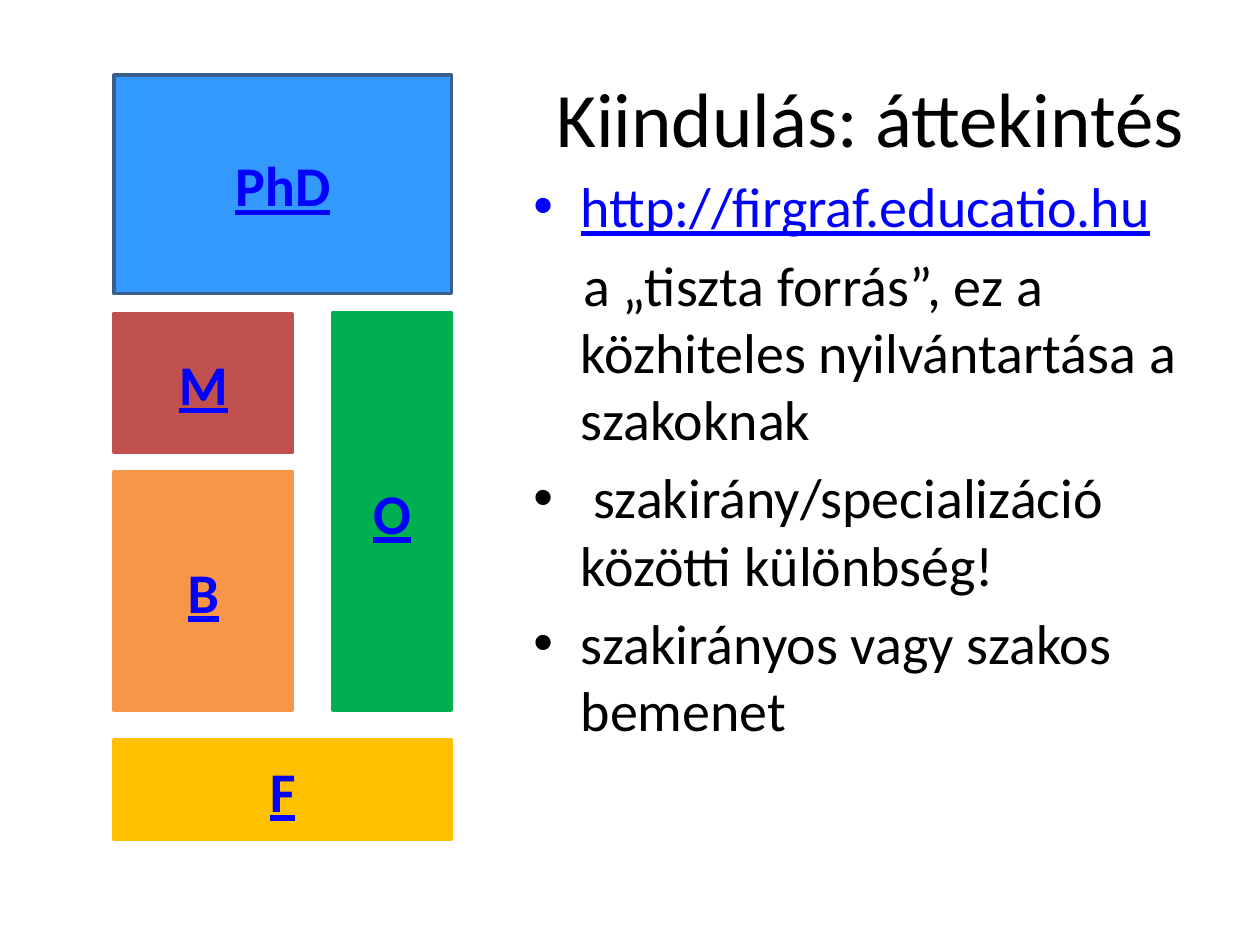
from dataclasses import dataclass

from lxml.etree import SubElement
from pptx import Presentation
from pptx.dml.color import RGBColor
from pptx.enum.shapes import MSO_SHAPE
from pptx.enum.text import MSO_ANCHOR, MSO_AUTO_SIZE, PP_ALIGN
from pptx.oxml.ns import qn
from pptx.util import Pt


@dataclass(frozen=True)
class Theme:
    """Colours, font and type sizes of the slide."""

    font: str = "Calibri"
    title_size: int = 44
    body_size: int = 32
    ink: str = "000000"
    link: str = "0000FF"
    doctoral: str = "3399FF"
    doctoral_edge: str = "3A5F8C"
    master: str = "C0504D"
    bachelor: str = "F79646"
    undivided: str = "00B050"
    vocational: str = "FFC000"


class SlideBuilder:
    """Adds styled elements to the current slide."""

    def __init__(self, slide, theme):
        self.slide = slide
        self.theme = theme

    def place(self, element, left, top, width, height):
        element.left, element.top = Pt(left), Pt(top)
        element.width, element.height = Pt(width), Pt(height)

    def run(self, paragraph, text, size, color, linked=False, bold=False):
        run = paragraph.add_run()
        run.text = text
        run.font.name = self.theme.font
        run.font.size = Pt(size)
        run.font.bold = bold
        run.font.underline = linked
        run.font.color.rgb = RGBColor.from_string(color)

    def title(self, text, *box):
        heading = self.slide.shapes.title
        self.place(heading, *box)
        frame = heading.text_frame
        frame.auto_size = MSO_AUTO_SIZE.NONE
        frame.vertical_anchor = MSO_ANCHOR.MIDDLE
        frame.paragraphs[0].alignment = PP_ALIGN.RIGHT
        self.run(frame.paragraphs[0], text, self.theme.title_size, self.theme.ink)

    def points(self, items, *box):
        body = self.slide.placeholders[1]
        self.place(body, *box)
        frame = body.text_frame
        frame.auto_size = MSO_AUTO_SIZE.NONE
        for index, (text, bulleted, linked) in enumerate(items):
            paragraph = frame.add_paragraph() if index else frame.paragraphs[0]
            properties = paragraph._p.get_or_add_pPr()
            properties.set("marL", str(Pt(27)))
            properties.set("indent", str(Pt(-27 if bulleted else 1.5)))
            if bulleted:
                SubElement(properties, qn("a:buChar")).set("char", "•")
            else:
                SubElement(properties, qn("a:buNone"))
            paragraph.space_before = Pt(0.2 * self.theme.body_size if index else 0)
            color = self.theme.link if linked else self.theme.ink
            self.run(paragraph, text, self.theme.body_size, color, linked)

    def block(self, label, fill, edge, *box):
        block = self.slide.shapes.add_shape(MSO_SHAPE.RECTANGLE, *map(Pt, box))
        block.shadow.inherit = False
        block.fill.solid()
        block.fill.fore_color.rgb = RGBColor.from_string(fill)
        block.line.color.rgb = RGBColor.from_string(edge)
        block.line.width = Pt(2)
        frame = block.text_frame
        frame.word_wrap = True
        frame.vertical_anchor = MSO_ANCHOR.MIDDLE
        frame.paragraphs[0].alignment = PP_ALIGN.CENTER
        self.run(frame.paragraphs[0], label, self.theme.body_size,
                 self.theme.link, linked=True, bold=True)


def main():
    """Build the overview of study levels and save it."""
    deck = Presentation()
    deck.slide_width, deck.slide_height = Pt(720), Pt(540)
    theme = Theme()
    builder = SlideBuilder(deck.slides.add_slide(deck.slide_layouts[1]), theme)

    builder.title("Kiindulás: áttekintés", 36, 21.6, 648, 90)
    builder.points([
        ("http://firgraf.educatio.hu", True, True),
        ("a „tiszta forrás”, ez a közhiteles nyilvántartása a szakoknak", False, False),
        (" szakirány/specializáció közötti különbség!", True, False),
        ("szakirányos vagy szakos bemenet", True, False),
    ], 297.6, 94.5, 386.4, 388)

    left, full, half, narrow = 65.2, 192.8, 102, 68
    right = left + full - narrow
    middle, bottom, master_height, gap = 179, 406, 79.4, 11.3
    bachelor_top = middle + master_height + gap
    for label, fill, edge, *box in (
        ("B", theme.bachelor, theme.bachelor, left, bachelor_top, half, bottom - bachelor_top),
        ("M", theme.master, theme.master, left, middle, half, master_height),
        ("O", theme.undivided, theme.undivided, right, middle, narrow, bottom - middle),
        ("F", theme.vocational, theme.vocational, left, 423, full, 56.7),
        ("PhD", theme.doctoral, theme.doctoral_edge, left, 43, full, 124.8),
    ):
        builder.block(label, fill, edge, *box)

    deck.save("out.pptx")


if __name__ == "__main__":
    main()
